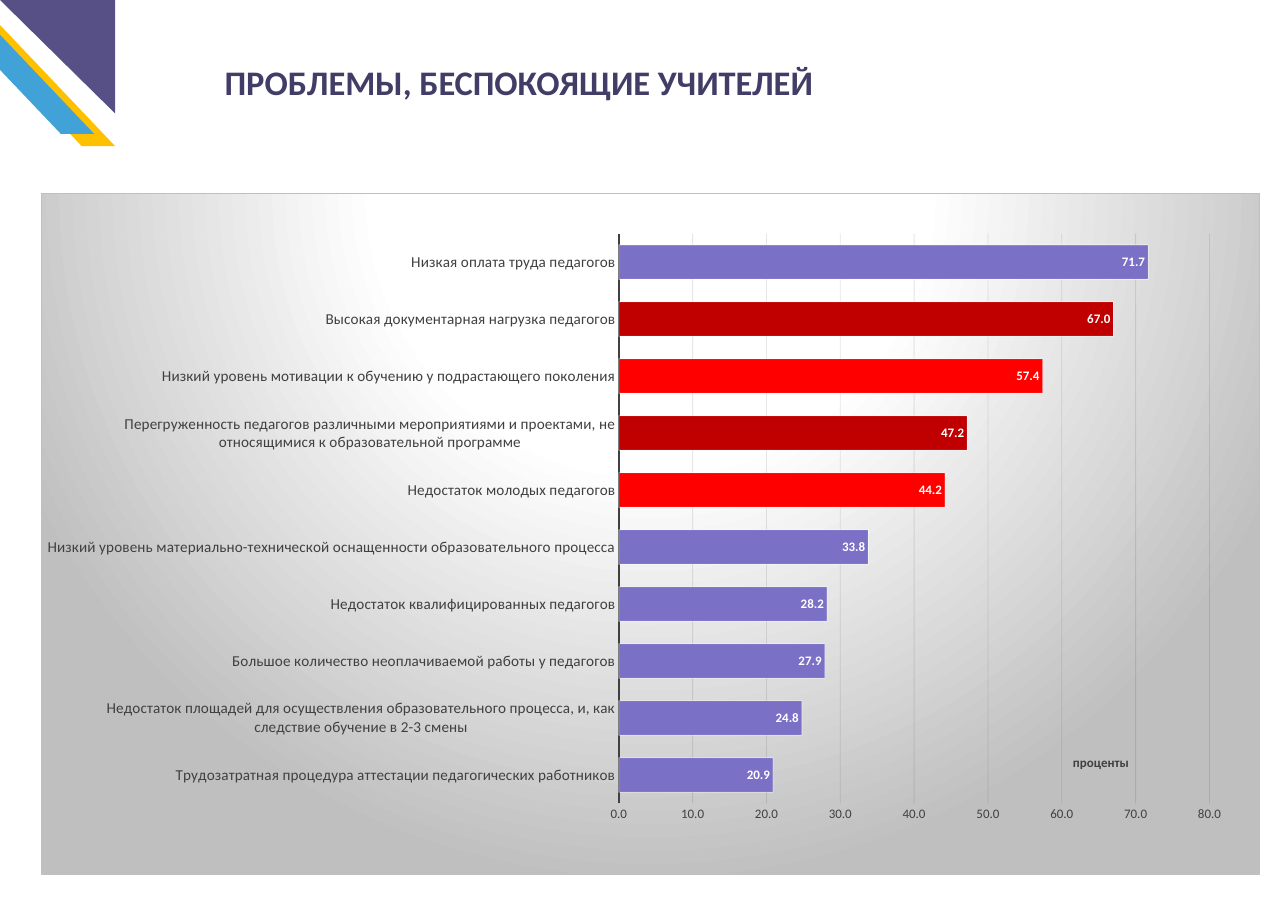
from dataclasses import dataclass

from lxml.etree import SubElement
from pptx import Presentation
from pptx.chart.data import CategoryChartData
from pptx.dml.color import RGBColor
from pptx.enum.chart import XL_CHART_TYPE, XL_LABEL_POSITION, XL_TICK_MARK
from pptx.enum.shapes import MSO_SHAPE
from pptx.enum.text import MSO_ANCHOR, PP_ALIGN
from pptx.oxml import parse_xml
from pptx.oxml.ns import nsdecls, qn
from pptx.util import Pt


@dataclass(frozen=True)
class Theme:
    font: str = "Calibri"
    title: str = "423D67"
    text: str = "404040"
    white: str = "FFFFFF"
    gold: str = "FFC000"
    sky: str = "41A2D8"
    plum: str = "565087"
    violet: str = "7A70C6"
    red: str = "FF0000"
    dark_red: str = "C00000"
    grey: str = "BFBFBF"
    grid: str = "0D0D0D"
    title_size: float = 31.8
    category_size: float = 14
    value_size: float = 12


PROBLEMS = [
    ("Трудозатратная процедура аттестации педагогических работников", 20.9, "violet"),
    ("Недостаток площадей для осуществления образовательного процесса, и, как следствие обучение в 2-3 смены",
     24.8, "violet"),
    ("Большое количество неоплачиваемой работы у педагогов", 27.9, "violet"),
    ("Недостаток квалифицированных педагогов", 28.2, "violet"),
    ("Низкий уровень материально-технической оснащенности образовательного процесса", 33.8, "violet"),
    ("Недостаток молодых педагогов", 44.2, "red"),
    ("Перегруженность педагогов различными мероприятиями и проектами, не относящимися к образовательной программе",
     47.2, "dark_red"),
    ("Низкий уровень мотивации к обучению у подрастающего поколения", 57.4, "red"),
    ("Высокая документарная нагрузка педагогов", 67.0, "dark_red"),
    ("Низкая оплата труда педагогов", 71.7, "violet"),
]


def apply(obj, values):
    for name, value in values.items():
        setattr(obj, name, value)


def box(left, top, width, height):
    return dict(left=Pt(left), top=Pt(top), width=Pt(width), height=Pt(height))


class SlideBuilder:
    def __init__(self, prs, theme):
        self.theme = theme
        self.s = prs.slides.add_slide(prs.slide_layouts[5])

    def font(self, font, size, color, bold=False):
        apply(font, dict(name=self.theme.font, size=Pt(size), bold=bold))
        font.color.rgb = RGBColor.from_string(color)

    def line(self, line, color, width, alpha=None):
        line.color.rgb = RGBColor.from_string(color)
        line.width = Pt(width)
        if alpha:
            clr = line.fill._xPr.find(".//" + qn("a:srgbClr"))
            SubElement(clr, qn("a:alpha"), val=str(alpha * 1000))

    def title(self, text, frame):
        sp = self.s.shapes.title
        apply(sp, frame)
        tf = sp.text_frame
        apply(tf, dict(word_wrap=True, vertical_anchor=MSO_ANCHOR.TOP, margin_left=0,
                       margin_right=Pt(7.2), margin_top=Pt(3.6), margin_bottom=Pt(3.6)))
        p = tf.paragraphs[0]
        p.alignment = PP_ALIGN.LEFT
        r = p.add_run()
        r.text = text
        self.font(r.font, self.theme.title_size, self.theme.title, True)

    def corner(self, kind, frame, color, flips, adj=None):
        sp = self.s.shapes.add_shape(kind, *frame.values())
        sp.shadow.inherit = False
        sp.fill.solid()
        sp.fill.fore_color.rgb = RGBColor.from_string(color)
        sp.line.fill.background()
        for flip in flips:
            sp.element.spPr.xfrm.set(flip, "1")
        if adj:
            sp.adjustments[0] = adj

    def layout(self, x, y, w=None, h=None):
        sizes = [("xMode", "edge"), ("yMode", "edge"), ("x", x), ("y", y)]
        if w:
            sizes = [("layoutTarget", "inner"), *sizes, ("w", w), ("h", h)]
        items = "".join(f'<c:{tag} val="{val}"/>' for tag, val in sizes)
        return parse_xml(f'<c:layout {nsdecls("c")}><c:manualLayout>{items}</c:manualLayout></c:layout>')

    def place(self, parent, layout, index):
        for old in parent.findall(qn("c:layout")):
            parent.remove(old)
        parent.insert(index, layout)

    def backdrop(self, chart):
        t = self.theme
        stops = "".join(f'<a:gs pos="{pos * 1000}"><a:srgbClr val="{color}"/></a:gs>'
                        for pos, color in [(0, t.white), (39, t.white), (100, t.grey)])
        chart.element.find(qn("c:chart")).addnext(parse_xml(
            f'<c:spPr {nsdecls("c", "a")}><a:gradFill><a:gsLst>{stops}</a:gsLst><a:path path="circle">'
            '<a:fillToRect l="50000" t="-80000" r="50000" b="180000"/></a:path></a:gradFill>'
            f'<a:ln w="{Pt(0.75)}"><a:solidFill><a:srgbClr val="{t.grey}"/></a:solidFill></a:ln></c:spPr>'))

    def axes(self, chart):
        t = self.theme
        cat, val = chart.category_axis, chart.value_axis
        for axis, size in [(cat, t.category_size), (val, t.value_size)]:
            apply(axis, dict(major_tick_mark=XL_TICK_MARK.NONE, minor_tick_mark=XL_TICK_MARK.NONE))
            self.font(axis.tick_labels.font, size, t.text)
        cat.has_major_gridlines = False
        self.line(cat.format.line, t.text, 1.5)
        apply(val, dict(minimum_scale=0, maximum_scale=80, major_unit=10, has_major_gridlines=True))
        apply(val.tick_labels, dict(number_format="0.0", number_format_is_linked=False))
        val.format.line.fill.background()
        self.line(val.major_gridlines.format.line, t.grid, 0.75, 10)
        title = val.axis_title
        p = title.text_frame.paragraphs[0]
        r = p.add_run()
        r.text = "проценты"
        self.font(r.font, t.value_size, t.text, True)
        self.place(title.element, self.layout(0.845, 0.82), 1)

    def bar_chart(self, rows, frame):
        t = self.theme
        data = CategoryChartData(number_format="0.0")
        data.categories = [name for name, _, _ in rows]
        data.add_series("Проценты", [value for _, value, _ in rows])
        chart = self.s.shapes.add_chart(XL_CHART_TYPE.BAR_CLUSTERED, *frame.values(), data).chart
        apply(chart, dict(has_title=False, has_legend=False))
        self.font(chart.font, 10, "000000")
        self.backdrop(chart)
        self.place(chart.element.find(".//" + qn("c:plotArea")),
                   self.layout(0.474, 0.059, 0.485, 0.837), 0)
        self.axes(chart)
        plot = chart.plots[0]
        apply(plot, dict(gap_width=65, vary_by_categories=False, has_data_labels=True))
        apply(plot.data_labels, dict(show_value=True, position=XL_LABEL_POSITION.INSIDE_END,
                                     number_format="0.0", number_format_is_linked=False))
        self.font(plot.data_labels.font, t.value_size, t.white, True)
        for i, (_, _, color) in enumerate(rows):
            fmt = plot.series[0].points[i].format
            fmt.fill.solid()
            fmt.fill.fore_color.rgb = RGBColor.from_string(getattr(t, color))
            self.line(fmt.line, t.white, 0.75, 50)


def main():
    prs = Presentation()
    apply(prs, dict(slide_width=Pt(1190), slide_height=Pt(842)))
    theme = Theme()
    s = SlideBuilder(prs, theme)
    for left, top, color in [(-57, -4.5, theme.gold), (-76.5, -16, theme.sky)]:
        s.corner(MSO_SHAPE.PARALLELOGRAM, box(left, top, 163.5, 139.7), color, ["flipH"], 0.95)
    s.corner(MSO_SHAPE.RIGHT_TRIANGLE, box(0, 0, 106.5, 105), theme.plum, ["flipH", "flipV"])
    s.bar_chart(PROBLEMS, box(38, 178.5, 1126, 630))
    s.title("ПРОБЛЕМЫ, БЕСПОКОЯЩИЕ УЧИТЕЛЕЙ", box(207.5, 52.5, 713.5, 46))
    prs.save("out.pptx")


if __name__ == "__main__":
    main()
